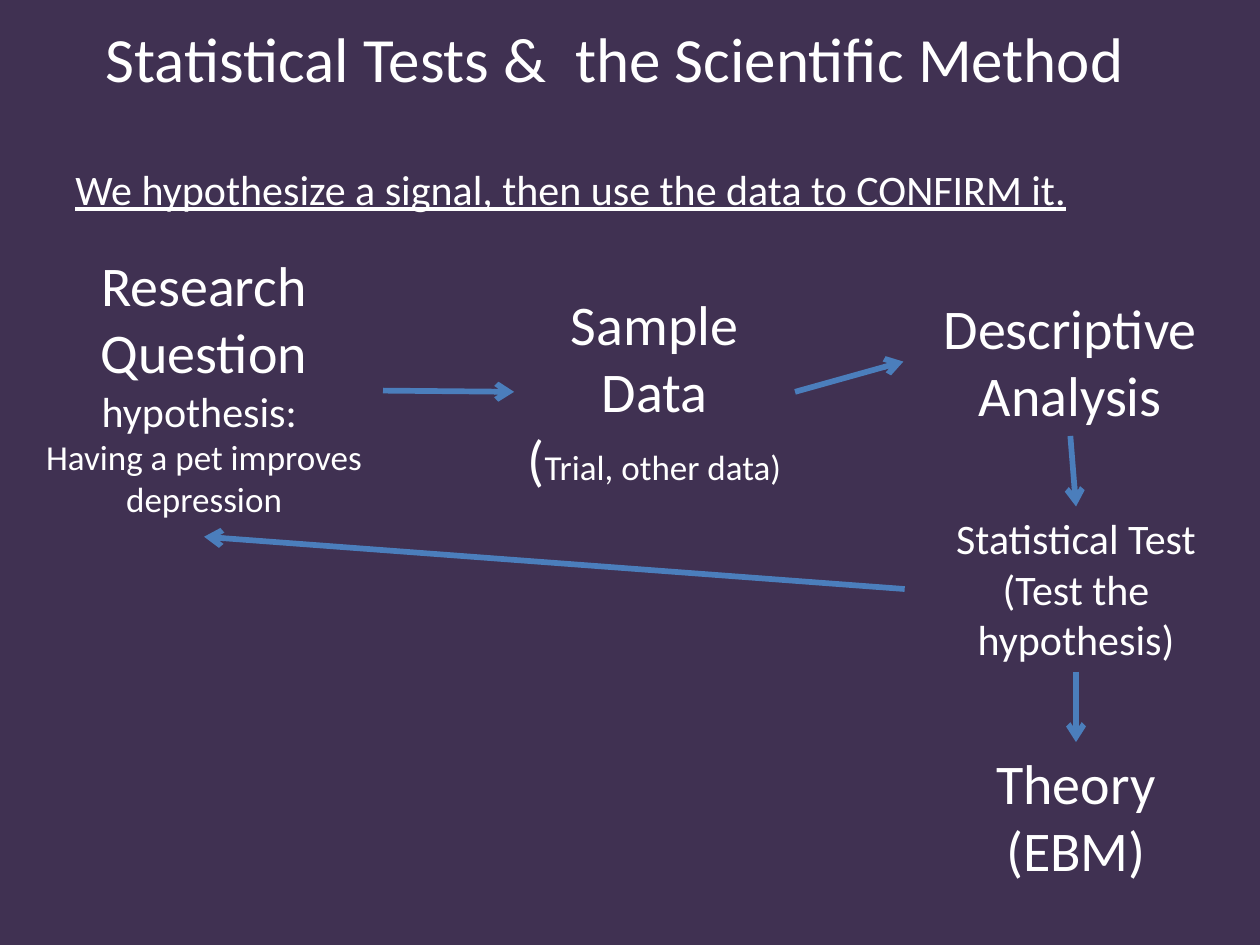
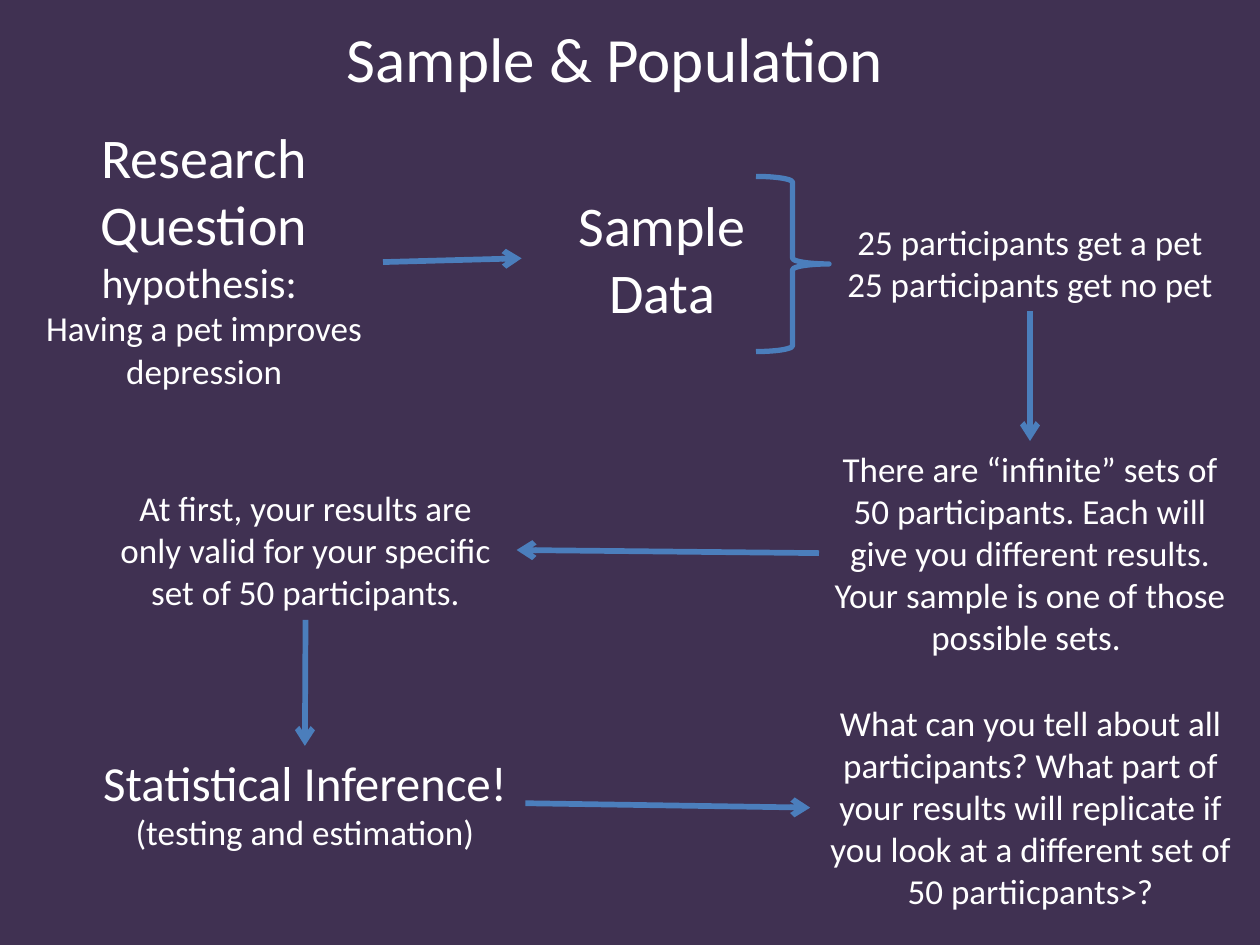
from lxml import etree
from pptx import Presentation
from pptx.dml.color import RGBColor
from pptx.enum.shapes import MSO_CONNECTOR, MSO_SHAPE
from pptx.enum.text import MSO_ANCHOR, MSO_AUTO_SIZE, PP_ALIGN
from pptx.oxml.ns import qn
from pptx.util import Inches, Pt

STRAIGHT = MSO_CONNECTOR.STRAIGHT
RIGHT_BRACE = MSO_SHAPE.RIGHT_BRACE
MIDDLE, TOP = MSO_ANCHOR.MIDDLE, MSO_ANCHOR.TOP
GROW, FIXED = MSO_AUTO_SIZE.SHAPE_TO_FIT_TEXT, MSO_AUTO_SIZE.NONE
CENTER, LEFT = PP_ALIGN.CENTER, PP_ALIGN.LEFT

COLORS = {"background": "403152", "text": "FFFFFF", "line": "4B7EBC"}
FONT = "Calibri"
SLIDE_SIZE = (10, 7.5)
TITLE_AREA = (0.46, 0.01, 8.84, 0.89)
TITLE_SIZE = 36
ARROW_WIDTH, BRACE_WIDTH = 3.25, 3
SIDES = {"top": 0, "left": 1, "bottom": 2, "right": 3}

QUESTION = [
    [("Research Question", 32)],
    [("hypothesis: ", 24)],
    [("Having a pet improves depression", 20)],
]

SLIDES = [
    {
        "title": "Statistical Tests &  the Scientific Method",
        "subtitle": {
            "area": (0.5, 1.15, 8.84, 0.69),
            "text": "We hypothesize a signal, then use the data to CONFIRM it.",
            "size": 24,
        },
        "steps": {
            "question": ((0.2, 1.94, 2.84, 2.32), QUESTION),
            "sample": ((4.08, 2.25, 2.23, 1.72), [
                [("Sample Data", 32)],
                [("(", 32), ("Trial, other data)", 20)],
            ]),
            "analysis": ((7.17, 2.28, 2.65, 1.18), [[("Descriptive Analysis", 32)]]),
            "test": ((7.18, 4.02, 2.72, 1.31), [
                [("Statistical Test", 24)],
                [("(Test the hypothesis)", 24)],
            ]),
            "theory": ((7.54, 5.89, 2, 1.18), [[("Theory", 32)], [("(EBM)", 32)]]),
        },
        "arrows": [
            ("question", "right", "sample", "left"),
            ("sample", "right", "analysis", "left"),
            ("analysis", "bottom", "test", "top"),
            ("test", "bottom", "theory", "top"),
            ("test", "left", "question", "bottom"),
        ],
    },
    {
        "title": "Sample & Population",
        "steps": {
            "question": ((0.2, 0.92, 2.84, 2.32), QUESTION),
            "sample": ((4.14, 1.46, 2.23, 1.18), [[("Sample Data", 32)]]),
            "groups": ((6.5, 1.7, 3.35, 0.77), [
                [("25 participants get a pet", 20)],
                [("25 participants get no pet", 20)],
            ]),
            "sets": ((6.5, 3.5, 3.35, 1.78), [[(
                "There are “infinite” sets of 50 participants. Each will give you "
                "different results. Your sample is one of those possible sets. ", 20)]]),
            "validity": ((0.75, 3.81, 3.35, 1.11), [[(
                "At first, your results are only valid for your specific set of "
                "50 participants.", 20)]]),
            "inference": ((0.67, 5.92, 3.5, 0.91), [
                [("Statistical Inference!", 28)],
                [("(testing and estimation)", 20)],
            ]),
            "replication": ((6.43, 5.52, 3.5, 1.78), [[(
                "What can you tell about all participants? What part of your results "
                "will replicate if you look at a different set of 50 partiicpants>?", 20)]]),
        },
        "brace": {"area": (6, 1.4, 0.58, 1.39), "adjustments": (0.08, 0.5)},
        "arrows": [
            ("question", "right", "sample", "left"),
            ("groups", "bottom", "sets", "top"),
            ("sets", "left", "validity", "right"),
            ("validity", "bottom", "inference", "top"),
            ("inference", "right", "replication", "left"),
        ],
    },
]


def color(name):
    return RGBColor.from_string(COLORS[name])


def inches(area):
    return [Inches(length) for length in area]


def add_text(page, area, paragraphs, align=CENTER, anchor=TOP, fit=GROW, underline=None):
    box = page.shapes.add_textbox(*inches(area))
    frame = box.text_frame
    frame.word_wrap = True
    frame.auto_size = fit
    frame.vertical_anchor = anchor
    for index, runs in enumerate(paragraphs):
        para = frame.add_paragraph() if index else frame.paragraphs[0]
        para.alignment = align
        for text, size in runs:
            span = para.add_run()
            span.text = text
            span.font.name = FONT
            span.font.size = Pt(size)
            span.font.underline = underline
            span.font.color.rgb = color("text")
    return box


def style_line(line, width):
    line.color.rgb = color("line")
    line.width = Pt(width)


def add_arrow(page, start, start_side, end, end_side):
    arrow = page.shapes.add_connector(STRAIGHT, 0, 0, 0, 0)
    arrow.begin_connect(start, SIDES[start_side])
    arrow.end_connect(end, SIDES[end_side])
    style_line(arrow.line, ARROW_WIDTH)
    properties = arrow.line._get_or_add_ln()
    etree.SubElement(properties, qn("a:tailEnd"), type="arrow")
    etree.SubElement(properties.getparent(), qn("a:effectLst"))


def add_brace(page, area, adjustments):
    brace = page.shapes.add_shape(RIGHT_BRACE, *inches(area))
    brace.shadow.inherit = False
    brace.fill.background()
    style_line(brace.line, BRACE_WIDTH)
    for index, value in enumerate(adjustments):
        brace.adjustments[index] = value


def build_page(deck, content):
    page = deck.slides.add_slide(deck.slide_layouts[6])
    page.background.fill.solid()
    page.background.fill.fore_color.rgb = color("background")
    add_text(page, TITLE_AREA, [[(content["title"], TITLE_SIZE)]], anchor=MIDDLE, fit=FIXED)
    if "subtitle" in content:
        subtitle = content["subtitle"]
        add_text(page, subtitle["area"], [[(subtitle["text"], subtitle["size"])]],
                 align=LEFT, anchor=MIDDLE, fit=FIXED, underline=True)
    boxes = {name: add_text(page, area, paragraphs)
             for name, (area, paragraphs) in content["steps"].items()}
    if "brace" in content:
        add_brace(page, **content["brace"])
    for start, start_side, end, end_side in content["arrows"]:
        add_arrow(page, boxes[start], start_side, boxes[end], end_side)


def main():
    deck = Presentation()
    deck.slide_width, deck.slide_height = inches(SLIDE_SIZE)
    for content in SLIDES:
        build_page(deck, content)
    deck.save("out.pptx")


if __name__ == "__main__":
    main()
